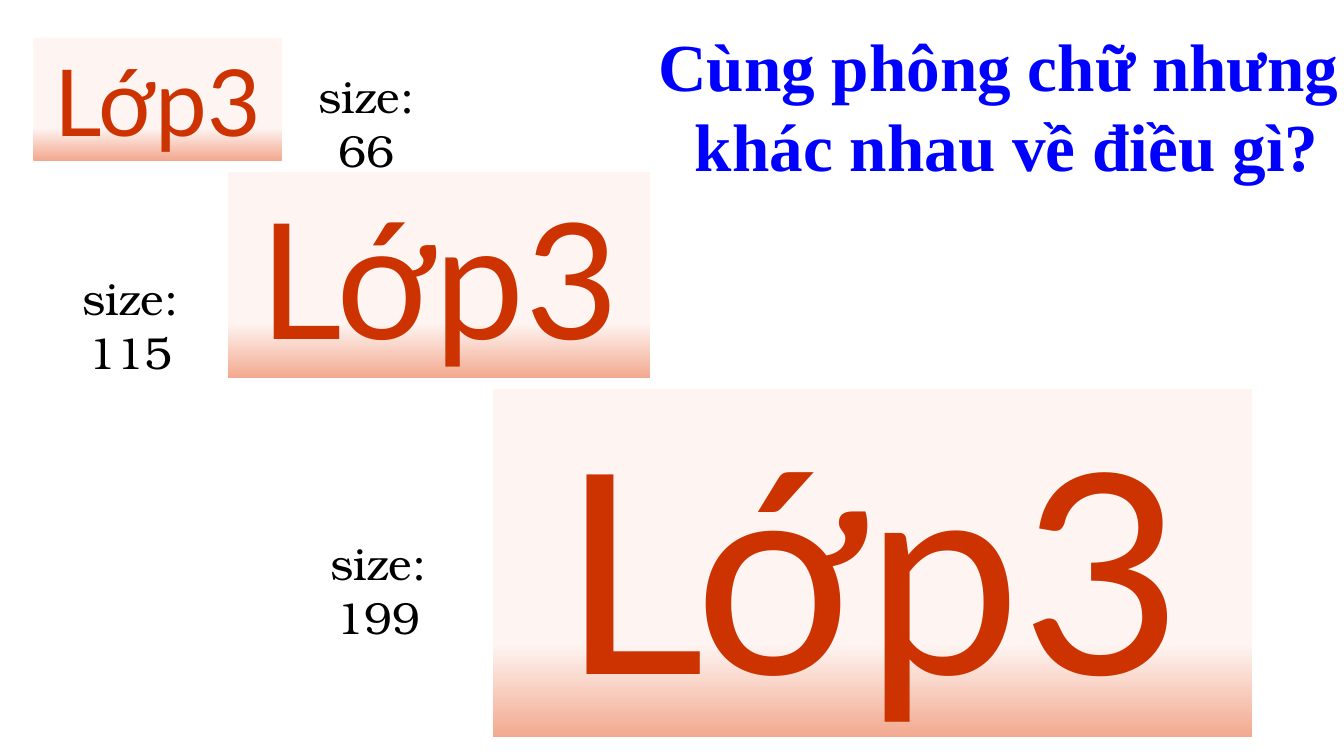
from dataclasses import dataclass

from pptx import Presentation
from pptx.dml.color import RGBColor
from pptx.enum.shapes import MSO_SHAPE
from pptx.enum.text import MSO_ANCHOR, PP_ALIGN
from pptx.util import Inches, Pt

RECT = MSO_SHAPE.RECTANGLE
MIDDLE = MSO_ANCHOR.MIDDLE
TOP = MSO_ANCHOR.TOP
CENTER = PP_ALIGN.CENTER
WIDTH, HEIGHT = Inches(13.33), Inches(7.5)


@dataclass(frozen=True)
class Theme:
    pale: str = "FEF5F3"
    peach: str = "F3A98F"
    rust: str = "CC3300"
    black: str = "000000"
    blue: str = "0000FF"
    sample: str = "Lato"
    label: str = "TeX Gyre Bonum"
    title: str = "Times New Roman"
    small: int = 32
    large: int = 48


THEME = Theme()

SAMPLES = [
    (66, (2.48, 5.07, 18.53, 16.13), (20.93, 8.4, 12.68, 8.53)),
    (115, (16.95, 22.8, 31.43, 27.2), (2.48, 35.2, 14.48, 8.53)),
    (199, (36.68, 51.47, 56.49, 46), (20.93, 70.27, 14.48, 8.53)),
]


def place(box):
    left, top, width, height = box
    return (
        int(WIDTH * left / 100),
        int(HEIGHT * top / 100),
        int(WIDTH * width / 100),
        int(HEIGHT * height / 100),
    )


def write(shape, lines, font, size, color, wrap=False, bold=False, anchor=TOP):
    frame = shape.text_frame
    frame.word_wrap = wrap
    frame.vertical_anchor = anchor
    frame.text = "\n".join(lines)
    for para in frame.paragraphs:
        para.alignment = CENTER
        para.font.name = font
        para.font.size = Pt(size)
        para.font.bold = bold
        para.font.color.rgb = RGBColor.from_string(color)


def add_tile(slide, box, size):
    tile = slide.shapes.add_shape(RECT, *place(box))
    tile.shadow.inherit = False
    tile.line.fill.background()
    tile.fill.gradient()
    tile.fill.gradient_angle = 270
    shades = [(0.73, THEME.pale), (1, THEME.peach)]
    for stop, (share, color) in zip(tile.fill.gradient_stops, shades):
        stop.position = share
        stop.color.rgb = RGBColor.from_string(color)
    write(tile, ["Lớp3"], THEME.sample, size, THEME.rust, anchor=MIDDLE)


def add_label(slide, box, size):
    label = slide.shapes.add_textbox(*place(box))
    write(label, [f"size: {size}"], THEME.label, THEME.small, THEME.black, wrap=True)


def add_title(slide, box):
    title = slide.shapes.add_textbox(*place(box))
    lines = ["Cùng phông chữ nhưng ", "khác nhau về điều gì?"]
    write(title, lines, THEME.title, THEME.large, THEME.blue, bold=True)


def main():
    deck = Presentation()
    deck.slide_width, deck.slide_height = WIDTH, HEIGHT
    slide = deck.slides.add_slide(deck.slide_layouts[6])
    for size, tile, label in SAMPLES:
        add_tile(slide, tile, size)
        add_label(slide, label, size)
    add_title(slide, (47.94, 2.53, 53.94, 22.93))
    deck.save("out.pptx")


if __name__ == "__main__":
    main()
